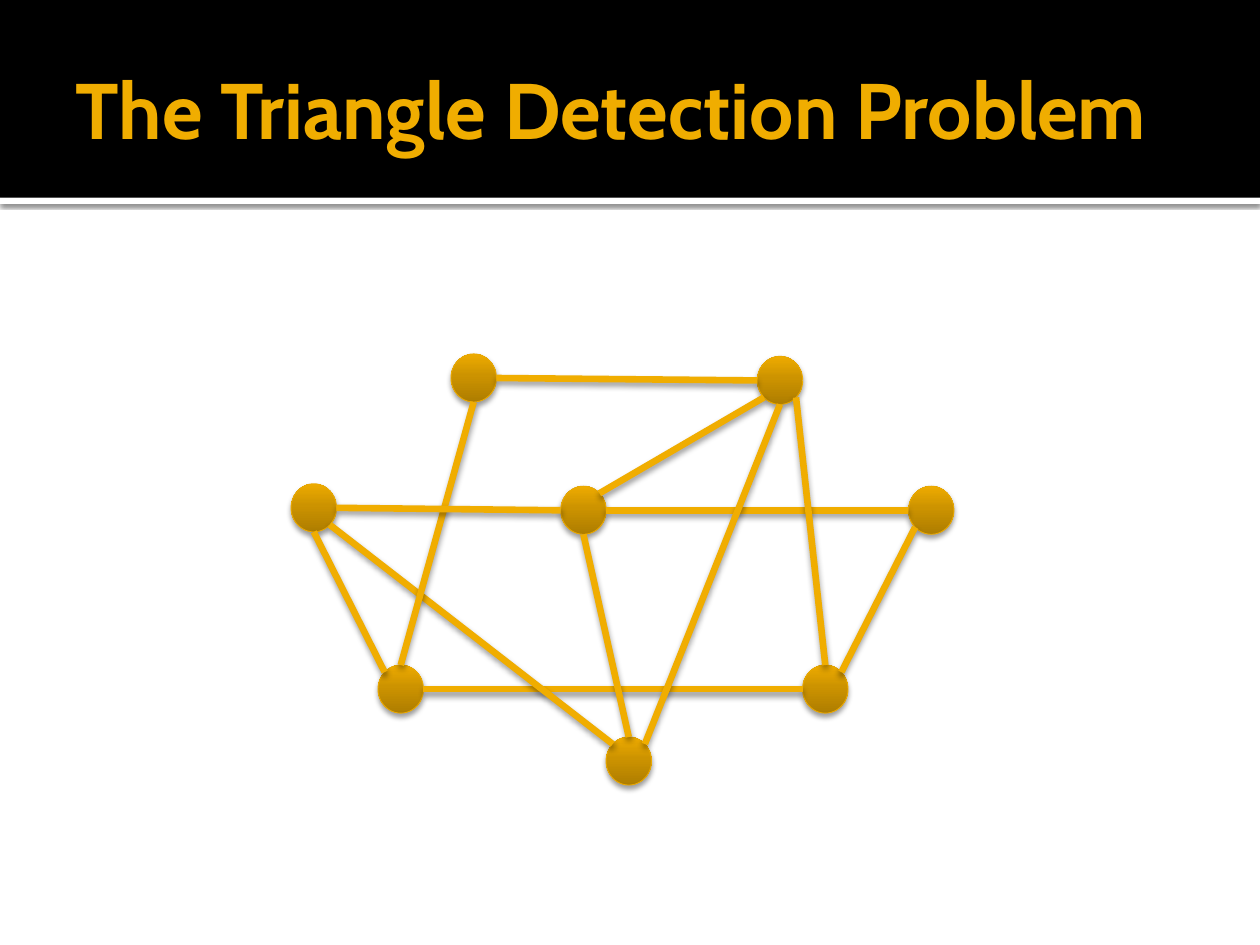
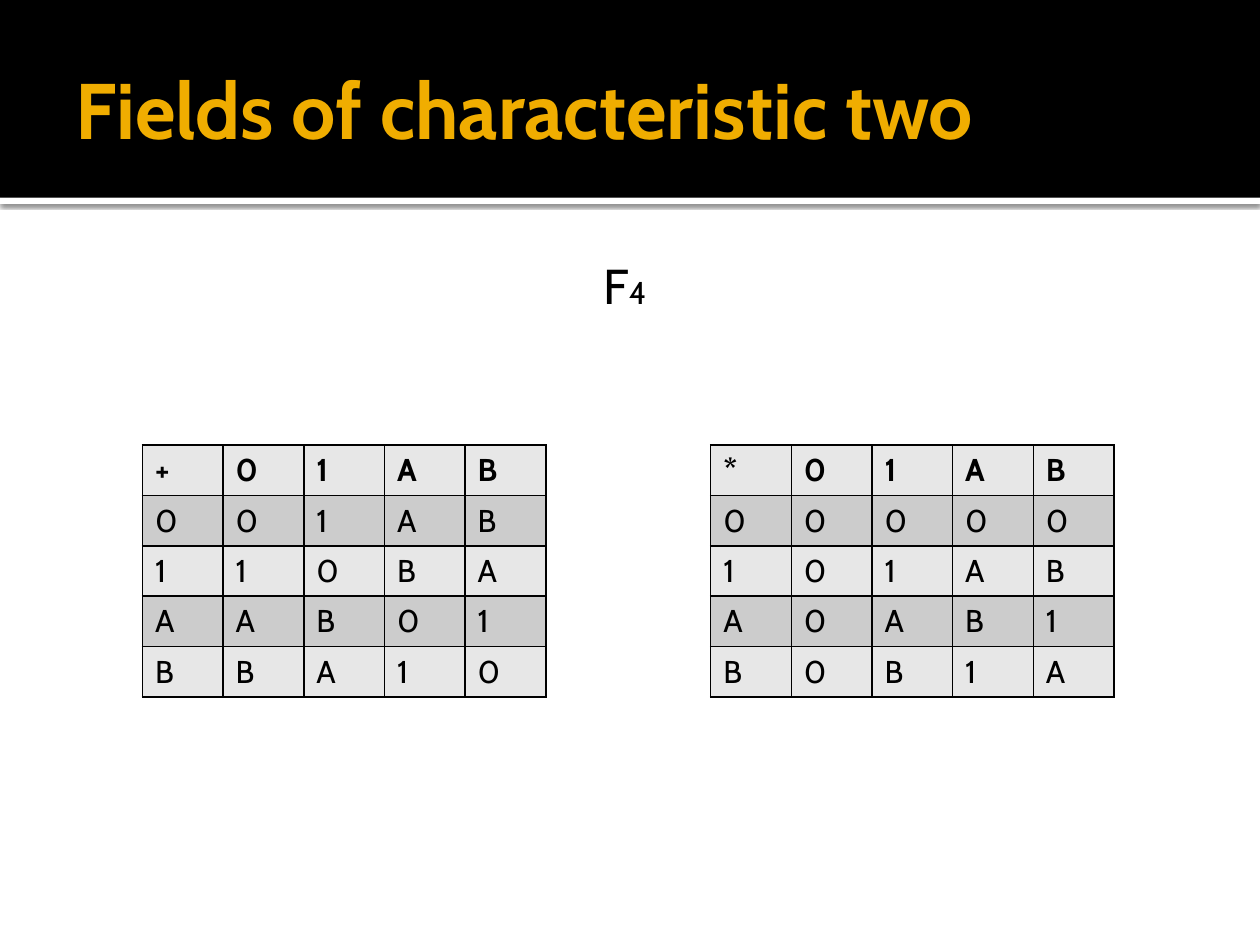
import math
from lxml import etree
from copy import deepcopy
from pptx import Presentation
from pptx.dml.color import RGBColor
from pptx.enum import shapes, text
from pptx.oxml import ns, parse_xml
from pptx.util import Pt

FONT = "Cabin"
GOLD, BLACK, WHITE = "F0AD00", "000000", "FFFFFF"
TITLES = ["The Triangle Detection Problem", "Fields of characteristic two"]


def colour(value):
    return RGBColor.from_string(value)


def add_shadow(item, blur, distance, opacity):
    item.element.spPr.append(parse_xml(
        f'<a:effectLst {ns.nsdecls("a")}>'
        f'<a:outerShdw blurRad="{Pt(blur)}" dist="{Pt(distance)}" dir="5400000" rotWithShape="0">'
        f'<a:srgbClr val="{BLACK}"><a:alpha val="{opacity * 1000}"/></a:srgbClr>'
        '</a:outerShdw></a:effectLst>'))


deck = Presentation()
deck.slide_width, deck.slide_height = Pt(720), Pt(540)

pages = []
for title in TITLES:
    page = deck.slides.add_slide(deck.slide_layouts[6])
    pages.append(page)

    strip = page.shapes.add_shape(shapes.MSO_SHAPE.RECTANGLE, 0, Pt(113), Pt(720), Pt(3.6))
    band = page.shapes.add_shape(shapes.MSO_SHAPE.RECTANGLE, 0, 0, Pt(720), Pt(113))
    for bar, fill in ((strip, WHITE), (band, BLACK)):
        bar.fill.solid()
        bar.fill.fore_color.rgb = colour(fill)
        bar.line.fill.background()
    add_shadow(strip, 2.5, 0.8, 60)
    band.shadow.inherit = False

    box = page.shapes.add_textbox(Pt(36), Pt(12.2), Pt(648), Pt(98.6))
    frame = box.text_frame
    frame.word_wrap = True
    frame.vertical_anchor = text.MSO_ANCHOR.MIDDLE
    frame.margin_left = Pt(7.2)
    frame.margin_top = frame.margin_right = frame.margin_bottom = Pt(3.6)
    para = frame.paragraphs[0]
    para.text = title
    para.font.name, para.font.size, para.font.bold = FONT, Pt(45), True
    para.font.color.rgb = colour(GOLD)

graph_page, field_page = pages

NODE_WIDTH, NODE_HEIGHT = 26, 27.5
GRADIENT = [(0, "AE7D00"), (0.55, "CC9300"), (1, "EEAB00")]
COMPASS = ["E", "SE", "S", "SW", "W", "NW", "N", "NE"]
centres = {
    "top left": (270.7, 216),
    "top right": (445.7, 217.4),
    "left": (179.3, 290.2),
    "middle": (333.4, 291.6),
    "right": (532.1, 291.6),
    "low left": (229, 393.8),
    "low right": (471.6, 393.8),
    "bottom": (359.3, 434.9),
}
edges = [
    ("middle", "E", "right", "W"),
    ("low right", "W", "low left", "E"),
    ("bottom", "NW", "left", "SE"),
    ("left", "S", "low left", "NW"),
    ("low left", "N", "top left", "S"),
    ("top right", "W", "top left", "E"),
    ("top right", "SW", "middle", "NE"),
    ("low right", "NE", "right", "SW"),
    ("middle", "S", "bottom", "N"),
    ("top right", "S", "bottom", "NE"),
    ("middle", "W", "left", "E"),
    ("low right", "N", "top right", "SE"),
]

for x, y in centres.values():
    node = graph_page.shapes.add_shape(
        shapes.MSO_SHAPE.OVAL, Pt(x - NODE_WIDTH / 2), Pt(y - NODE_HEIGHT / 2),
        Pt(NODE_WIDTH), Pt(NODE_HEIGHT))
    node.fill.gradient()
    node.fill.gradient_angle = 90
    stop_list = node.element.spPr.xpath(".//a:gsLst")[0]
    stop_list.append(deepcopy(stop_list[0]))
    for stop, (position, shade) in zip(node.fill.gradient_stops, GRADIENT):
        stop.position = position
        stop.color.rgb = colour(shade)
    node.line.color.rgb = colour("EBA900")
    node.line.width = Pt(0.5)
    add_shadow(node, 3.1, 2, 38)

for start, start_side, end, end_side in edges:
    points = []
    for name, side in ((start, start_side), (end, end_side)):
        angle = math.radians(45 * COMPASS.index(side))
        x, y = centres[name]
        points += [Pt(x + NODE_WIDTH / 2 * math.cos(angle)),
                   Pt(y + NODE_HEIGHT / 2 * math.sin(angle))]
    edge = graph_page.shapes.add_connector(shapes.MSO_CONNECTOR.STRAIGHT, *points)
    edge.line.color.rgb = colour(GOLD)
    edge.line.width = Pt(3.78)
    add_shadow(edge, 3.5, 2, 38)

CELL_WIDTH, CELL_HEIGHT = 46.1, 28.8
ROW_FILLS = ["E7E7E7", "CCCCCC"]
tables = [
    (81.4, ["+01AB", "001AB", "110BA", "AAB01", "BBA10"]),
    (406.1, ["*01AB", "00000", "101AB", "A0AB1", "B0B1A"]),
]
for left, rows in tables:
    grid = field_page.shapes.add_table(
        5, 5, Pt(left), Pt(254.2), Pt(5 * CELL_WIDTH), Pt(5 * CELL_HEIGHT)).table
    grid.first_row = grid.horz_banding = False
    for r, symbols in enumerate(rows):
        for c, symbol in enumerate(symbols):
            cell = grid.cell(r, c)
            para = cell.text_frame.paragraphs[0]
            para.text = symbol
            para.font.name, para.font.size, para.font.bold = FONT, Pt(18), r == 0
            para.font.color.rgb = colour(BLACK)
            properties = cell._tc.get_or_add_tcPr()
            for side in ("lnL", "lnR", "lnT", "lnB"):
                border = etree.SubElement(properties, ns.qn(f"a:{side}"), w=str(Pt(1)))
                solid = etree.SubElement(border, ns.qn("a:solidFill"))
                etree.SubElement(solid, ns.qn("a:srgbClr"), val=BLACK)
            cell.fill.solid()
            cell.fill.fore_color.rgb = colour(ROW_FILLS[r % 2])
            fill = properties.find(ns.qn("a:solidFill"))
            properties.append(fill)

box = field_page.shapes.add_textbox(Pt(337.7), Pt(142.6), Pt(69.8), Pt(41))
box.text_frame.word_wrap = True
box.text_frame.auto_size = text.MSO_AUTO_SIZE.SHAPE_TO_FIT_TEXT
para = box.text_frame.paragraphs[0]
para.font.name = FONT
for symbol, size in (("F", 28), ("4", 18)):
    span = para.add_run()
    span.text = symbol
    span.font.name, span.font.size = FONT, Pt(size)
    span.font.color.rgb = colour(BLACK)

deck.save("out.pptx")
